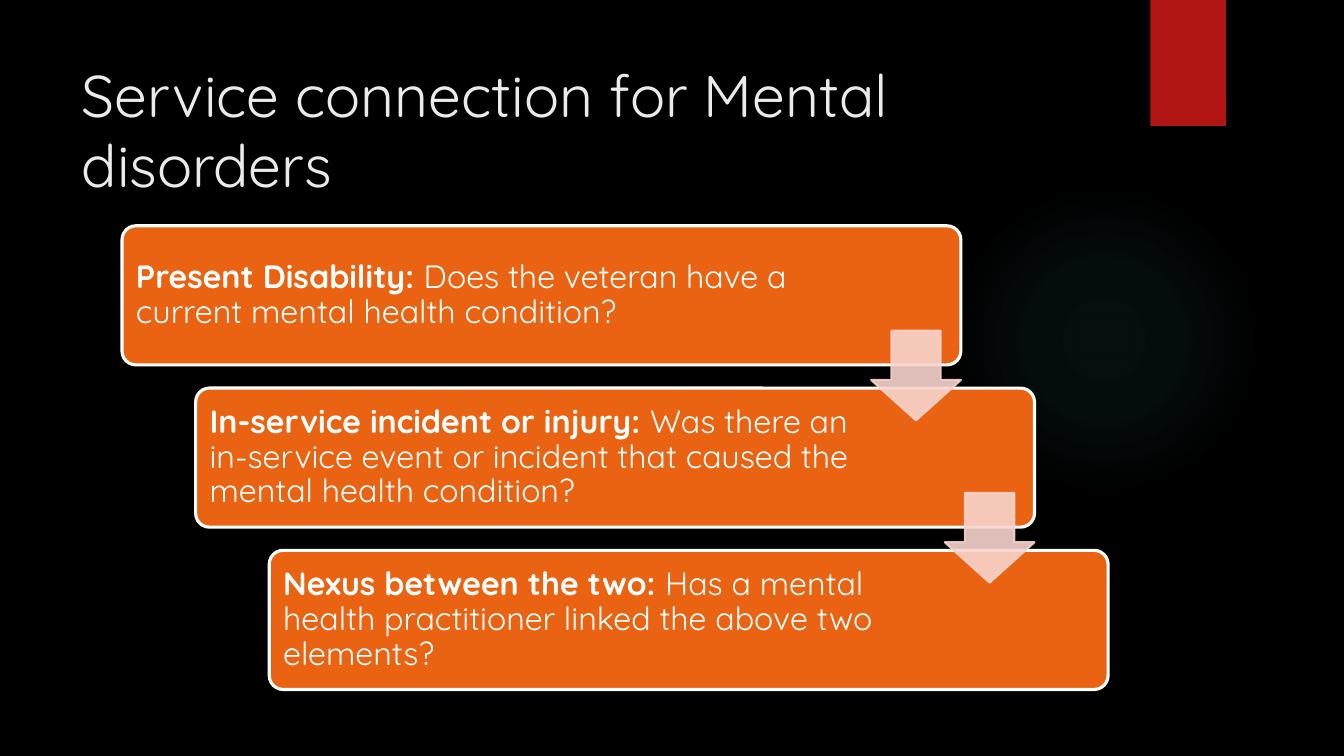
from lxml.etree import SubElement
from pptx import Presentation
from pptx.dml.color import RGBColor
from pptx.enum.shapes import MSO_SHAPE
from pptx.enum.text import MSO_ANCHOR, MSO_AUTO_SIZE, PP_ALIGN
from pptx.oxml import parse_xml
from pptx.oxml.ns import nsdecls, qn
from pptx.util import Inches, Pt

FONT = "Quicksand"
ORANGE, PINK, RED, WHITE = "EA6312", "F7D3CC", "B01513", "FFFFFF"
GLOW, GLOW_STOPS = "50B9C1", [(0, 7), (36, 6), (69, 0)]

STEPS = [
    ("Present Disability: ", "Does the veteran have a current mental health condition?", 6.83),
    ("In-service incident or injury: ",
     "Was there an in-service event or incident that caused the mental health condition?", 6.61),
    ("Nexus between the two: ",
     "Has a mental health practitioner linked the above two elements?", 6.61),
]


def color(hex_code):
    return RGBColor.from_string(hex_code)


def add_block(slide, preset, left, top, width, height, fill, line=None, line_width=0):
    block = slide.shapes.add_shape(
        preset, Inches(left), Inches(top), Inches(width), Inches(height))
    block.shadow.inherit = False
    block.fill.solid()
    block.fill.fore_color.rgb = color(fill)
    if line:
        block.line.color.rgb = color(line)
        block.line.width = Pt(line_width)
    else:
        block.line.fill.background()
    return block


def format_run(run, size, hex_code, bold=False):
    run.font.name = FONT
    run.font.size = Pt(size)
    run.font.bold = bold
    run.font.color.rgb = color(hex_code)


def add_backdrop(slide):
    slide.background.fill.solid()
    slide.background.fill.fore_color.rgb = color("000000")
    glow = add_block(slide, MSO_SHAPE.OVAL, 9.41, 1.83, 3.08, 3.08, GLOW)
    stops = "".join(
        f'<a:gs pos="{position * 1000}"><a:srgbClr val="{GLOW}">'
        f'<a:alpha val="{opacity * 1000}"/></a:srgbClr></a:gs>'
        for position, opacity in GLOW_STOPS)
    gradient = parse_xml(
        f'<a:gradFill {nsdecls("a")} rotWithShape="1"><a:gsLst>{stops}</a:gsLst>'
        '<a:path path="circle"><a:fillToRect l="50000" t="50000" r="50000" b="50000"/>'
        '</a:path></a:gradFill>')
    solid = glow._element.spPr.find(qn("a:solidFill"))
    solid.getparent().replace(solid, gradient)
    add_block(slide, MSO_SHAPE.RECTANGLE, 11.41, 0, 0.75, 1.25, RED)


def add_title(slide, left, top, width, height):
    title = slide.shapes.title
    title.left, title.top = Inches(left), Inches(top)
    title.width, title.height = Inches(width), Inches(height)
    frame = title.text_frame
    frame.text = "Service connection for Mental disorders"
    frame.word_wrap = True
    frame.auto_size = MSO_AUTO_SIZE.NONE
    frame.vertical_anchor = MSO_ANCHOR.BOTTOM
    heading = frame.paragraphs[0]
    heading.alignment = PP_ALIGN.LEFT
    format_run(heading.runs[0], 42, "EBEBEB")


def add_step(slide, left, top, width, height, label, question, text_width):
    card = add_block(slide, MSO_SHAPE.ROUNDED_RECTANGLE, left, top, width, height,
                     ORANGE, WHITE, 2.25)
    card.adjustments[0] = 0.1
    caption = slide.shapes.add_textbox(
        Inches(left + 0.04), Inches(top + 0.04), Inches(text_width), Inches(height - 0.08))
    frame = caption.text_frame
    frame.word_wrap = True
    frame.vertical_anchor = MSO_ANCHOR.MIDDLE
    frame.margin_left = frame.margin_right = Inches(0.1)
    frame.margin_top = frame.margin_bottom = Inches(0.1)
    wording = frame.paragraphs[0]
    wording.line_spacing = 0.9
    for text, bold in ((label, True), (question, False)):
        run = wording.add_run()
        run.text = text
        format_run(run, 23, WHITE, bold)


def add_step_arrow(slide, left, top, size):
    arrow = add_block(slide, MSO_SHAPE.DOWN_ARROW, left, top, size, size, PINK, PINK, 1.5)
    arrow.adjustments[0] = 0.55
    arrow.adjustments[1] = 0.45
    for tint in arrow._element.spPr.iter(qn("a:srgbClr")):
        SubElement(tint, qn("a:alpha")).set("val", "90000")


def add_staircase(slide, left, top, width, height):
    shift, drop, arrow_size = 0.73, 1.61, 0.89
    card_width = width - shift * (len(STEPS) - 1)
    card_height = height - drop * (len(STEPS) - 1)
    for index, (label, question, text_width) in enumerate(STEPS):
        add_step(slide, left + shift * index, top + drop * index,
                 card_width, card_height, label, question, text_width)
    for index in range(len(STEPS) - 1):
        add_step_arrow(slide, left + card_width - arrow_size + shift * index,
                       top + 1.04 + drop * index, arrow_size)


def main():
    deck = Presentation()
    deck.slide_width, deck.slide_height = Inches(13.33), Inches(7.5)
    slide = deck.slides.add_slide(deck.slide_layouts[5])
    add_backdrop(slide)
    add_title(slide, 0.71, 0.5, 10.29, 1.53)
    add_staircase(slide, 1.21, 2.24, 9.78, 4.6)
    deck.save("out.pptx")


if __name__ == "__main__":
    main()
